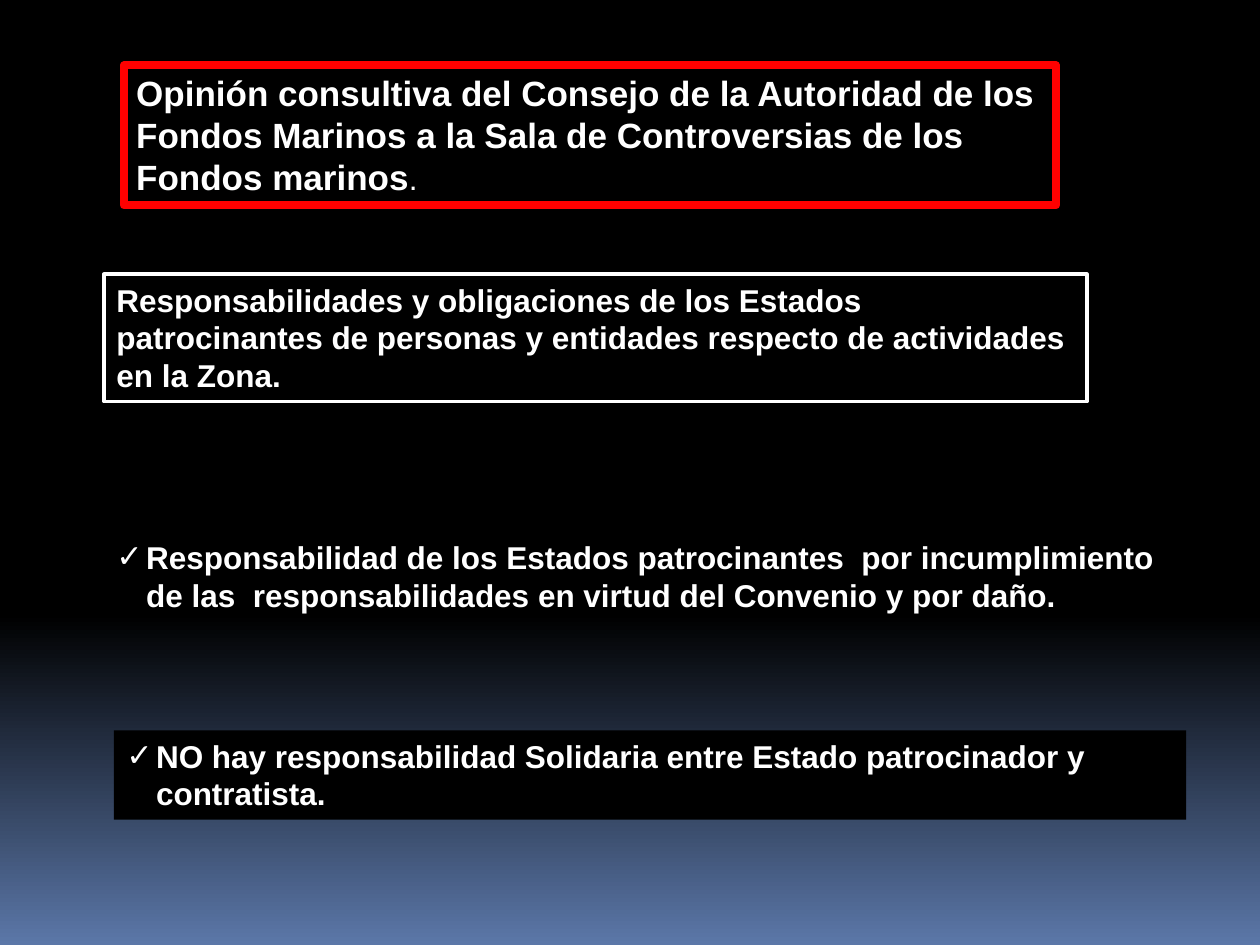
from copy import deepcopy

from lxml.etree import SubElement
from pptx import Presentation
from pptx.dml.color import RGBColor
from pptx.enum.shapes import MSO_SHAPE
from pptx.enum.text import MSO_ANCHOR, MSO_AUTO_SIZE, PP_ALIGN
from pptx.oxml.ns import qn
from pptx.util import Pt

COLORS = {"black": "000000", "white": "FFFFFF", "red": "FF0000", "blue": "5B77A8"}
BACKGROUND = [(0, "black"), (0.65, "black"), (1, "blue")]
FONT = "Arial"
HANGING = 17

BOXES = [
    {"at": (70.75, 37.4, 532.8, 80), "line": ("red", 4.5), "runs": [
        ("Opinión consultiva del Consejo de la Autoridad de los Fondos Marinos "
         "a la Sala de Controversias de los Fondos marinos", 20, True),
        (".", 18, False)]},
    {"at": (59.5, 156.75, 561.6, 72.7), "line": ("white", 2.25), "runs": [
        ("Responsabilidades y obligaciones de los Estados patrocinantes de "
         "personas y entidades respecto de actividades en la Zona.", 18, True)]},
    {"at": (59.5, 304, 612.75, 51), "bullet": "✓", "runs": [
        ("Responsabilidad de los Estados patrocinantes  por incumplimiento de las  "
         "responsabilidades en virtud del Convenio y por daño.", 18, True)]},
    {"at": (65.1, 417.4, 612.75, 51), "fill": "black", "bullet": "✓", "runs": [
        ("NO hay responsabilidad Solidaria entre Estado patrocinador y contratista.",
         18, True)]},
]


def rgb(name):
    return RGBColor.from_string(COLORS[name])


def paint_background(slide):
    fill = slide.background.fill
    fill.gradient()
    fill.gradient_angle = 270
    first = next(slide.element.iter(qn("a:gs")))
    first.addnext(deepcopy(first))
    for stop, (position, color) in zip(fill.gradient_stops, BACKGROUND):
        stop.position = position
        stop.color.rgb = rgb(color)


def add_bullet(p, char):
    pPr = p._p.get_or_add_pPr()
    pPr.set("marL", str(Pt(HANGING)))
    pPr.set("indent", str(-Pt(HANGING)))
    SubElement(pPr, qn("a:buFont"), typeface=FONT)
    SubElement(pPr, qn("a:buChar"), char=char)


def add_box(slide, box):
    at = [Pt(v) for v in box["at"]]
    if "line" in box or "fill" in box:
        sp = slide.shapes.add_shape(MSO_SHAPE.RECTANGLE, *at)
        sp.shadow.inherit = False
    else:
        sp = slide.shapes.add_textbox(*at)
    if "fill" in box:
        sp.fill.solid()
        sp.fill.fore_color.rgb = rgb(box["fill"])
    else:
        sp.fill.background()
    if "line" in box:
        color, width = box["line"]
        sp.line.color.rgb = rgb(color)
        sp.line.width = Pt(width)
    else:
        sp.line.fill.background()

    tf = sp.text_frame
    tf.word_wrap = True
    tf.auto_size = MSO_AUTO_SIZE.SHAPE_TO_FIT_TEXT
    tf.vertical_anchor = MSO_ANCHOR.TOP
    p = tf.paragraphs[0]
    p.alignment = PP_ALIGN.LEFT
    if "bullet" in box:
        add_bullet(p, box["bullet"])
    for text, size, bold in box["runs"]:
        r = p.add_run()
        r.text = text
        r.font.name = FONT
        r.font.size = Pt(size)
        r.font.bold = bold
        r.font.color.rgb = rgb("white")


prs = Presentation()
prs.slide_width, prs.slide_height = Pt(720), Pt(540)
slide = prs.slides.add_slide(prs.slide_layouts[6])
paint_background(slide)
for box in BOXES:
    add_box(slide, box)
prs.save("out.pptx")
